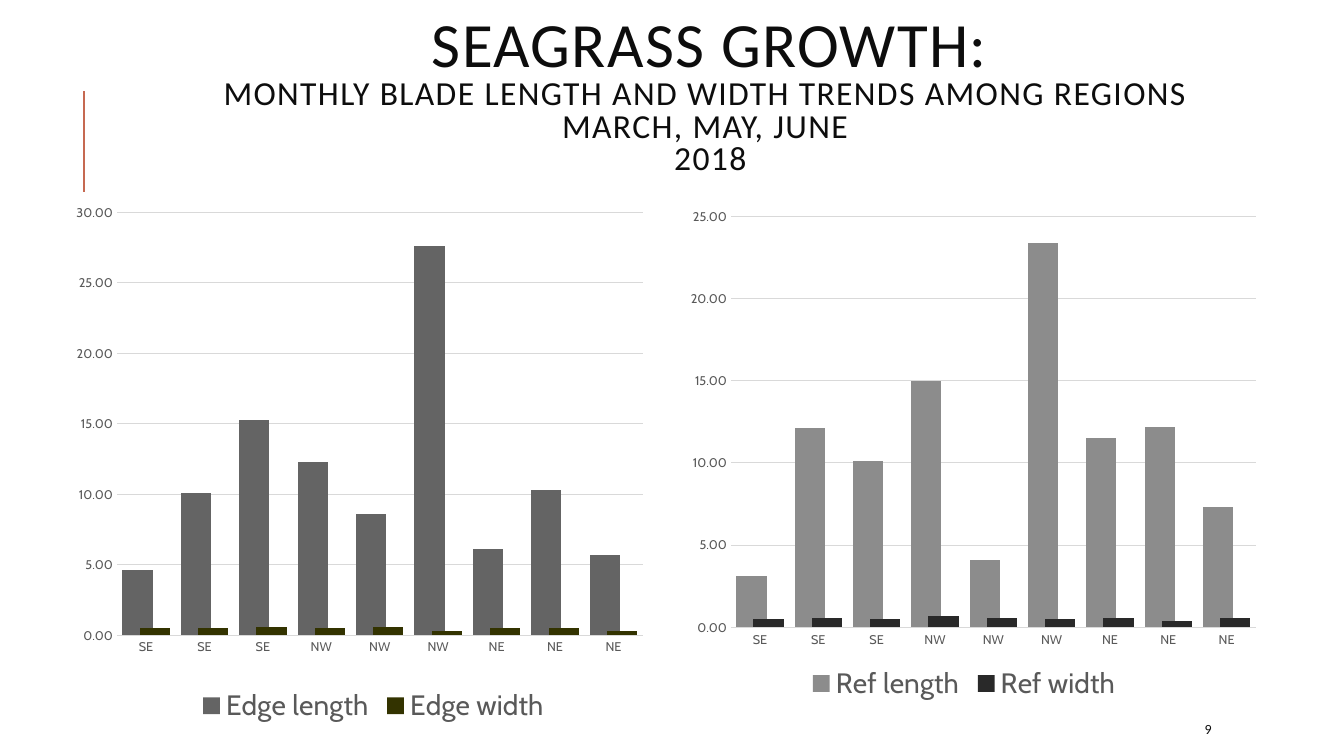
from pptx import Presentation, util as u
from pptx.chart.data import CategoryChartData
from pptx.dml.color import RGBColor
from pptx.enum import chart as ch, shapes, text
from pptx.oxml import parse_xml
from pptx.oxml.ns import nsdecls, qn

INK = RGBColor(0x0D, 0x0D, 0x0D)
BLACK = RGBColor(0, 0, 0)
LABEL = RGBColor(0x59, 0x59, 0x59)
GRID = RGBColor(0xD9, 0xD9, 0xD9)
RUST = RGBColor(0xC6, 0x69, 0x51)
SLATE = RGBColor(0x64, 0x64, 0x64)
OLIVE = RGBColor(0x33, 0x33, 0x00)
GREY = RGBColor(0x8C, 0x8C, 0x8C)
COAL = RGBColor(0x29, 0x29, 0x29)

REGIONS = [name for name in ("SE", "NW", "NE") for _ in range(3)]
TITLE = [
    ("SEAGRASS GROWTH:", 45),
    ("MONTHLY BLADE LENGTH AND WIDTH TRENDS AMONG REGIONS ", 24),
    ("MARCH, MAY, JUNE ", 24),
    ("2018", 24),
]
EDGE = [
    ("Edge length", SLATE, [4.6, 10.1, 15.3, 12.3, 8.6, 27.6, 6.1, 10.3, 5.7]),
    ("Edge width", OLIVE, [0.5, 0.5, 0.6, 0.5, 0.6, 0.3, 0.5, 0.5, 0.3]),
]
REF = [
    ("Ref length", GREY, [3.1, 12.1, 10.1, 15, 4.1, 23.4, 11.5, 12.2, 7.3]),
    ("Ref width", COAL, [0.5, 0.6, 0.5, 0.7, 0.6, 0.5, 0.6, 0.4, 0.6]),
]


def style(font, size, color, name):
    font.size, font.name = u.Pt(size), name
    font.color.rgb = color


def place(chart, plot):
    """Fix the inner plot area at (x, y, w, h), as shares of the chart."""
    area = chart._chartSpace.chart.plotArea
    for old in area.findall(qn("c:layout")):
        area.remove(old)
    modes = '<c:xMode val="edge"/><c:yMode val="edge"/>'
    sizes = "".join(f'<c:{key} val="{val}"/>' for key, val in zip("xywh", plot))
    area.insert(0, parse_xml(
        f'<c:layout {nsdecls("c")}><c:manualLayout><c:layoutTarget val="inner"/>'
        f'{modes}{sizes}</c:manualLayout></c:layout>'))


class Board:
    head, body = "Calibri", "Cabin"

    def __init__(self, slide):
        self.shapes = slide.shapes

    def rule(self, x, top, end, color, width):
        line = self.shapes.add_connector(
            shapes.MSO_CONNECTOR.STRAIGHT, *map(u.Inches, (x, end, x, top)))
        line.line.color.rgb, line.line.width = color, u.Pt(width)
        line._element.spPr.append(parse_xml(f'<a:effectLst {nsdecls("a")}/>'))

    def text(self, box, lines, align, track=0, lead=1.0):
        """Write (words, size) lines in one paragraph; track is in points."""
        frame = self.shapes.add_textbox(*map(u.Inches, box)).text_frame
        frame.word_wrap = True
        frame.vertical_anchor = text.MSO_ANCHOR.MIDDLE
        para = frame.paragraphs[0]
        para.alignment, para.line_spacing = align, lead
        style(para.font, lines[-1][1], INK, self.head)
        for i, (words, size) in enumerate(lines):
            if i:
                para.add_line_break()
            run = para.add_run()
            run.text, run.font.size = words, u.Pt(size)
            if track:
                run._r.get_or_add_rPr().set("spc", str(track * 100))

    def bars(self, box, plot, top, series):
        data = CategoryChartData(number_format="0.00")
        data.categories = REGIONS
        for name, _, vals in series:
            data.add_series(name, vals)
        chart = self.shapes.add_chart(
            ch.XL_CHART_TYPE.COLUMN_CLUSTERED, *map(u.Inches, box), data).chart
        style(chart.font, 10, BLACK, self.body)
        chart.has_title = False
        chart.has_legend = True
        chart.legend.position = ch.XL_LEGEND_POSITION.BOTTOM
        chart.legend.include_in_layout = False
        style(chart.legend.font, 20, LABEL, self.body)
        cats, vals = chart.category_axis, chart.value_axis
        for axis in (cats, vals):
            axis.major_tick_mark = axis.minor_tick_mark = ch.XL_TICK_MARK.NONE
            style(axis.tick_labels.font, 9, LABEL, self.body)
        vals.minimum_scale, vals.maximum_scale, vals.major_unit = 0, top, 5
        vals.tick_labels.number_format = "0.00"
        vals.tick_labels.number_format_is_linked = False
        vals.format.line.fill.background()
        for line in (cats.format.line, vals.major_gridlines.format.line):
            line.color.rgb, line.width = GRID, u.Pt(0.75)
        group = chart.plots[0]
        group.gap_width, group.overlap, group.vary_by_categories = 36, 43, False
        for bar, (_, color, _) in zip(group.series, series):
            bar.format.fill.solid()
            bar.format.fill.fore_color.rgb = color
        place(chart, plot)


def main():
    deck = Presentation()
    deck.slide_width, deck.slide_height = u.Inches(13.33), u.Inches(7.5)
    board = Board(deck.slides.add_slide(deck.slide_layouts[6]))
    board.rule(0.83, 0.9, 1.9, RUST, 1.5)
    board.text((1.17, 0.36, 11.75, 1.23), TITLE, text.PP_ALIGN.CENTER, 1, 0.8)
    board.text((11.85, 7.08, 1.06, 0.3), [("9", 10)], text.PP_ALIGN.LEFT)
    board.bars((0.6, 1.78, 6.21, 5.45), (0.09, 0.06, 0.84, 0.77), 30, EDGE)
    board.bars((6.67, 1.78, 5.79, 5.23), (0.1, 0.07, 0.9, 0.78), 25, REF)
    deck.save("out.pptx")


if __name__ == "__main__":
    main()
